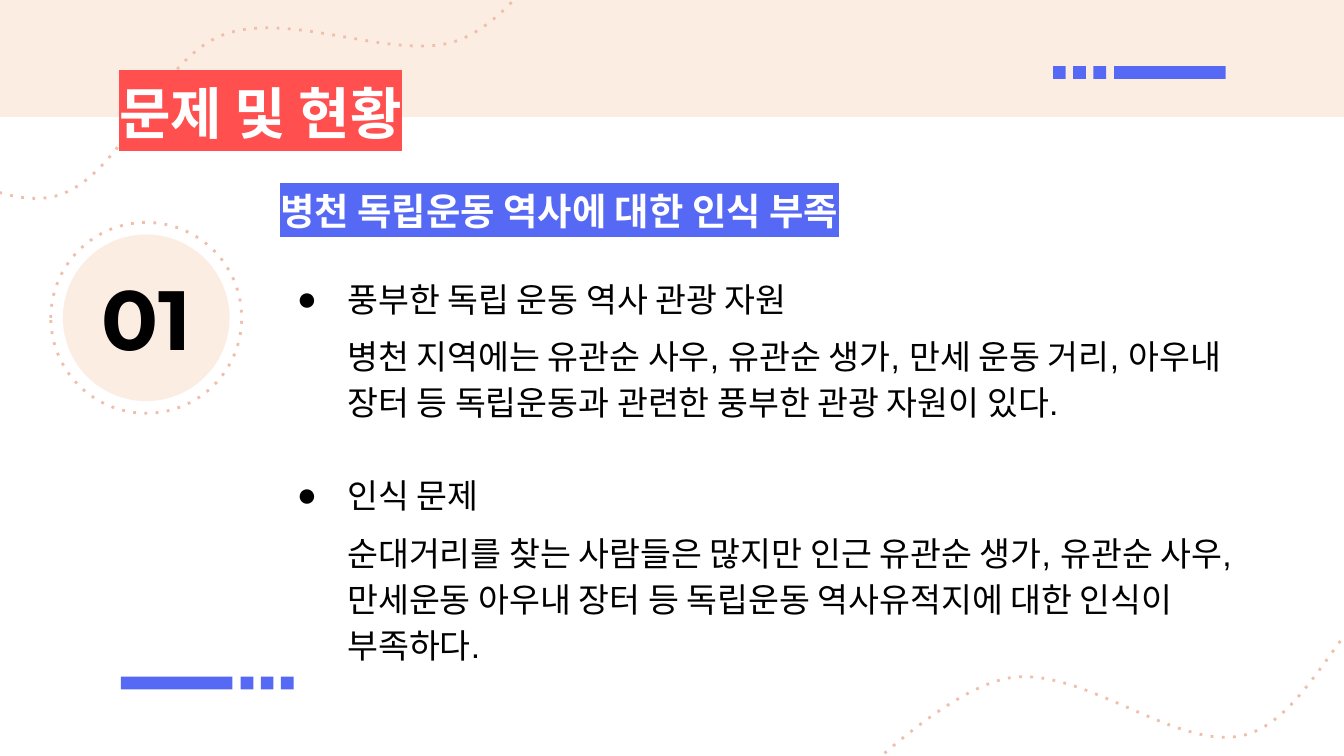
"""Build the slide on problems and the current state of Byeongcheon's historic sites."""
import pptx
import pptx.dml.color
import pptx.enum.dml
import pptx.enum.shapes
import pptx.enum.text
import pptx.oxml
import pptx.oxml.ns
import pptx.util

CREAM = pptx.dml.color.RGBColor(0xFC, 0xED, 0xE3)
PEACH = pptx.dml.color.RGBColor(0xEF, 0xBF, 0xAB)
BLUE = pptx.dml.color.RGBColor(0x56, 0x69, 0xF4)
RED = pptx.dml.color.RGBColor(0xFF, 0x4F, 0x4E)
WHITE = pptx.dml.color.RGBColor(0xFF, 0xFF, 0xFF)
BLACK = pptx.dml.color.RGBColor(0, 0, 0)
RECTANGLE = pptx.enum.shapes.MSO_SHAPE.RECTANGLE
OVAL = pptx.enum.shapes.MSO_SHAPE.OVAL
LEFT = pptx.enum.text.PP_ALIGN.LEFT
CENTER = pptx.enum.text.PP_ALIGN.CENTER
qn = pptx.oxml.ns.qn
NAMESPACE = pptx.oxml.ns.nsdecls("a")

presentation = pptx.Presentation()
presentation.slide_width = pptx.util.Inches(10)
presentation.slide_height = pptx.util.Inches(5.625)
CELL = presentation.slide_width // 100
slide = presentation.slides.add_slide(presentation.slide_layouts[5])
shapes = slide.shapes


def style_shape(shape, fill=None):
    """Fill a shape without outline, or give it a dotted outline only."""
    shape.shadow.inherit = False
    if fill is not None:
        shape.fill.solid()
        shape.fill.fore_color.rgb = fill
        shape.line.fill.background()
        return
    shape.fill.background()
    shape.line.color.rgb = PEACH
    shape.line.width = pptx.util.Pt(1.5)
    shape.line.dash_style = pptx.enum.dml.MSO_LINE.ROUND_DOT
    shape._element.spPr.find(qn("a:ln")).find(qn("a:prstDash")).set("val", "dot")


def write_text(shape, paragraphs, size, font="Montserrat", color=WHITE, bold=True,
               highlight=None, align=LEFT, line_spacing=None):
    """Write (text, bullet, space before) paragraphs in one format."""
    frame = shape.text_frame
    frame.word_wrap = True
    frame.auto_size = pptx.enum.text.MSO_AUTO_SIZE.NONE
    frame.vertical_anchor = pptx.enum.text.MSO_ANCHOR.TOP
    frame.margin_left = frame.margin_right = frame.margin_top = frame.margin_bottom = CELL
    for index, (text, bullet, space) in enumerate(paragraphs):
        paragraph = frame.add_paragraph() if index else frame.paragraphs[0]
        paragraph.alignment = align
        paragraph.space_before = pptx.util.Pt(space)
        if line_spacing:
            paragraph.line_spacing = line_spacing
            properties = paragraph._p.get_or_add_pPr()
            properties.set("marL", str(5 * CELL))
            properties.set("indent", str(int(-3.75 * CELL) if bullet else 0))
            if bullet:
                for tag in (f'buFont {NAMESPACE} typeface="{font}"',
                            f'buChar {NAMESPACE} char="{bullet}"'):
                    properties.append(pptx.oxml.parse_xml(f"<a:{tag}/>"))
        run = paragraph.add_run()
        run.text = text
        run.font.size = pptx.util.Pt(size)
        run.font.bold = bold
        run.font.color.rgb = color
        run.font.name = font
        if highlight is not None:
            run._r.rPr.find(qn("a:latin")).addprevious(pptx.oxml.parse_xml(
                f'<a:highlight {NAMESPACE}><a:srgbClr val="{highlight}"/></a:highlight>'))


band = shapes.add_shape(RECTANGLE, 0, 0, presentation.slide_width, int(8.7 * CELL))
style_shape(band, CREAM)

wave_points = [
    (-29.5, 22.1),
    (-26.9, 20.1), (-19.3, 11.7), (-13.7, 10.4),
    (-8.1, 9.2), (-1, 15.9), (4.1, 14.6),
    (9.1, 13.3), (11.6, 4.5), (16.6, 2.6),
    (21.6, 0.7), (29.5, 4.7), (34.1, 3),
    (38.7, 1.3), (42.4, -5.9), (44.1, -7.6),
]
for shift_x, shift_y in [(0, 0), (88.5, 40.1)]:
    points = [(int((x + shift_x) * CELL), int((y + shift_y) * CELL)) for x, y in wave_points]
    builder = shapes.build_freeform(*points[0])
    builder.add_line_segments(points[1:], close=False)
    wave = builder.convert_to_shape()
    segments = list(wave._element.iter(qn("a:lnTo")))
    for first in range(0, len(segments), 3):
        curve = pptx.oxml.parse_xml(f"<a:cubicBezTo {NAMESPACE}/>")
        segments[first].addprevious(curve)
        for segment in segments[first:first + 3]:
            curve.append(segment[0])
            segment.getparent().remove(segment)
    style_shape(wave)

for top, bar_left, first_square in [(4.92, 82.9, 78.35), (50.35, 9, 17.9)]:
    pieces = [(bar_left, 8.3)] + [(first_square + 1.5 * index, 0.95) for index in range(3)]
    for left, width in pieces:
        piece = shapes.add_shape(RECTANGLE, *(int(v * CELL) for v in (left, top, width, 0.95)))
        style_shape(piece, BLUE)

for diameter, fill in [(14.2, None), (12.4, CREAM)]:
    left, top = 10.88 - diameter / 2, 23.65 - diameter / 2
    circle = shapes.add_shape(OVAL, *(int(v * CELL) for v in (left, top, diameter, diameter)))
    style_shape(circle, fill)

title = shapes.title
title.left, title.top, title.width, title.height = (
    int(v * CELL) for v in (7.86, 4.87, 84.3, 6.3))
title._element.getparent().append(title._element)
write_text(title, [("문제 및 현황", None, 0)], 30, highlight=RED)

details = [
    ("풍부한 독립 운동 역사 관광 자원", "●", 0),
    ("병천 지역에는 유관순 사우, 유관순 생가, 만세 운동 거리, 아우내 장터 등 "
     "독립운동과 관련한 풍부한 관광 자원이 있다.", None, 6),
    ("인식 문제", "●", 24.8),
    ("순대거리를 찾는 사람들은 많지만 인근 유관순 생가, 유관순 사우, 만세운동 "
     "아우내 장터 등 독립운동 역사유적지에 대한 인식이 부족하다.", None, 6),
]
text_boxes = [
    ((19.85, 19.27, 77.1, 32.8), details,
     dict(size=18, font="Arial", color=BLACK, bold=False, line_spacing=1.15)),
    ((3.3, 18.85, 15.2, 11.1), [("01", None, 0)], dict(size=45, color=BLACK, align=CENTER)),
    ((19.85, 13.03, 54.2, 6.3), [("병천 독립운동 역사에 대한 인식 부족", None, 0)],
     dict(size=20, highlight=BLUE)),
]
for area, paragraphs, text_format in text_boxes:
    text_box = shapes.add_textbox(*(int(v * CELL) for v in area))
    write_text(text_box, paragraphs, **text_format)

presentation.save("out.pptx")
